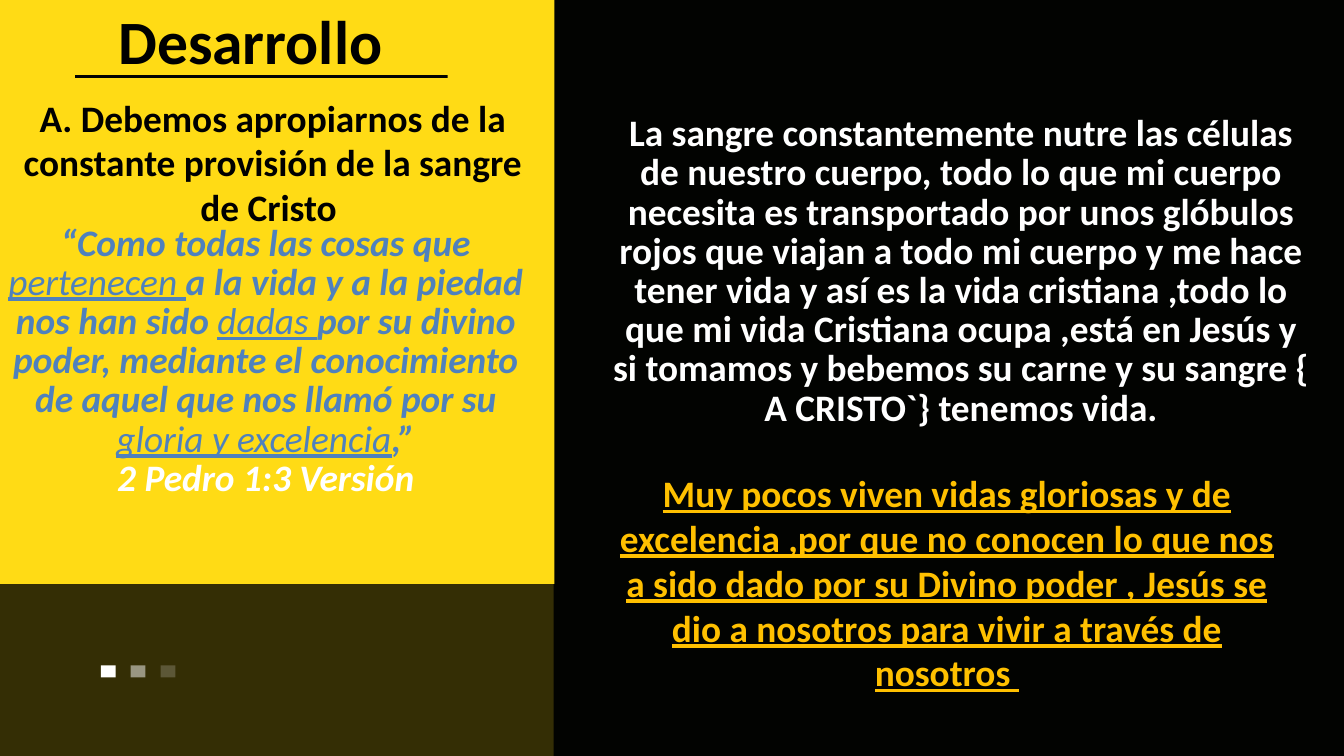
from lxml import etree
from pptx import Presentation
from pptx.dml.color import RGBColor
from pptx.enum.shapes import MSO_SHAPE
from pptx.enum.text import PP_ALIGN
from pptx.oxml.ns import qn
from pptx.util import Inches, Pt

RECTANGLE = MSO_SHAPE.RECTANGLE
LEFT, CENTER = PP_ALIGN.LEFT, PP_ALIGN.CENTER
COLORS = {
    "black": "000000",
    "background": "020301",
    "yellow": "FFDB15",
    "white": "FFFFFF",
    "blue": "4F81BD",
    "orange": "FFC000",
}


def color(name):
    return RGBColor.from_string(COLORS[name])


def add_run(paragraph, text, fill="black", size=40, font="Calibri",
            bold=True, italic=False, underline=False):
    run = paragraph.add_run()
    run.text = text
    run.font.name = font
    run.font.size = Pt(size)
    run.font.bold = bold
    run.font.italic = italic
    run.font.underline = underline
    run.font.color.rgb = color(fill)


class SlideBuilder:
    """Holds the style and the slide being built."""

    def __init__(self, slide, background):
        self.slide = slide
        slide.background.fill.solid()
        slide.background.fill.fore_color.rgb = color(background)

    def rectangle(self, left, top, width, height, fill, opacity=100):
        shape = self.slide.shapes.add_shape(
            RECTANGLE, Inches(left), Inches(top), Inches(width), Inches(height))
        shape.shadow.inherit = False
        shape.line.fill.background()
        shape.fill.solid()
        shape.fill.fore_color.rgb = color(fill)
        if opacity < 100:
            tone = shape.fill._xPr.find(".//" + qn("a:srgbClr"))
            etree.SubElement(tone, qn("a:alpha"), val=str(opacity * 1000))

    def text(self, left, top, width, height, paragraphs, align=CENTER,
             line_spacing=None, margins=(0, 0, 0, 0)):
        """Each paragraph is a list of (text, format) pairs."""
        box = self.slide.shapes.add_textbox(
            Inches(left), Inches(top), Inches(width), Inches(height))
        frame = box.text_frame
        frame.word_wrap = True
        (frame.margin_left, frame.margin_top,
         frame.margin_right, frame.margin_bottom) = map(Inches, margins)
        for index, runs in enumerate(paragraphs):
            paragraph = frame.add_paragraph() if index else frame.paragraphs[0]
            paragraph.alignment = align
            if line_spacing:
                paragraph.line_spacing = Pt(line_spacing)
            for text, style in runs:
                add_run(paragraph, text, **style)


def main():
    presentation = Presentation()
    presentation.slide_width = Inches(20)
    presentation.slide_height = Inches(11.25)
    slide = presentation.slides.add_slide(presentation.slide_layouts[6])
    builder = SlideBuilder(slide, "background")

    # Left panels
    builder.rectangle(-0.51, 8.06, 8.75, 3.23, "yellow", opacity=20)
    builder.rectangle(-0.46, 0, 8.71, 8.69, "yellow")

    # Title
    builder.text(1.76, 0.08, 5.73, 1.08, [[("Desarrollo", {"size": 66})]],
                 align=LEFT, line_spacing=76.5)

    # Fading squares
    for index, opacity in enumerate((100, 50, 20)):
        builder.rectangle(1.5 + 0.445 * index, 9.9, 0.22, 0.18, "white", opacity)

    # Bible verse, one line below the top of its box
    verse = {"fill": "blue", "italic": True}
    marked = {**verse, "bold": False, "underline": True}
    builder.text(-0.06, 2.76, 8.03, 5.3, [
        [("“Como todas las cosas que ", verse),
         ("pertenecen ", marked),
         ("a la vida y a la piedad nos han sido ", verse),
         ("dadas ", marked),
         ("por su divino poder, mediante el conocimiento de aquel que nos "
          "llamó por su ", verse),
         ("gloria y excelencia", marked),
         (",”", verse)],
        [("2 Pedro 1:3 Versión", {**verse, "fill": "white"})],
    ], line_spacing=42, margins=(0, 0.58, 0, 0))

    # Title rule and heading
    builder.rectangle(1.12, 1.12, 5.54, 0.04, "background")
    padded = (0.1, 0.05, 0.1, 0.05)
    builder.text(0.09, 1.36, 7.94, 2.79, [[
        ("A. Debemos apropiarnos de la constante provisión de la sangre "
         "de Cristo ", {})]], margins=padded)

    # Right-hand texts
    builder.text(9.09, 6.95, 10, 3.47, [[
        ("Muy pocos viven vidas gloriosas y de excelencia ,por que no conocen "
         "lo que nos a sido dado por su Divino poder , Jesús se dio a nosotros "
         "para vivir a través de nosotros ",
         {"fill": "orange", "underline": True})]], margins=padded)
    builder.text(9.09, 1.71, 10.42, 4.71, [[
        ("La sangre constantemente nutre las células de nuestro cuerpo, todo "
         "lo que mi cuerpo necesita es transportado por unos glóbulos rojos "
         "que viajan a todo mi cuerpo y me hace tener vida y así es la vida "
         "cristiana ,todo lo que mi vida Cristiana ocupa ,está en Jesús y si "
         "tomamos y bebemos su carne y su sangre { A CRISTO`} tenemos vida.",
         {"fill": "white"})]], line_spacing=42)

    presentation.save("out.pptx")


if __name__ == "__main__":
    main()
